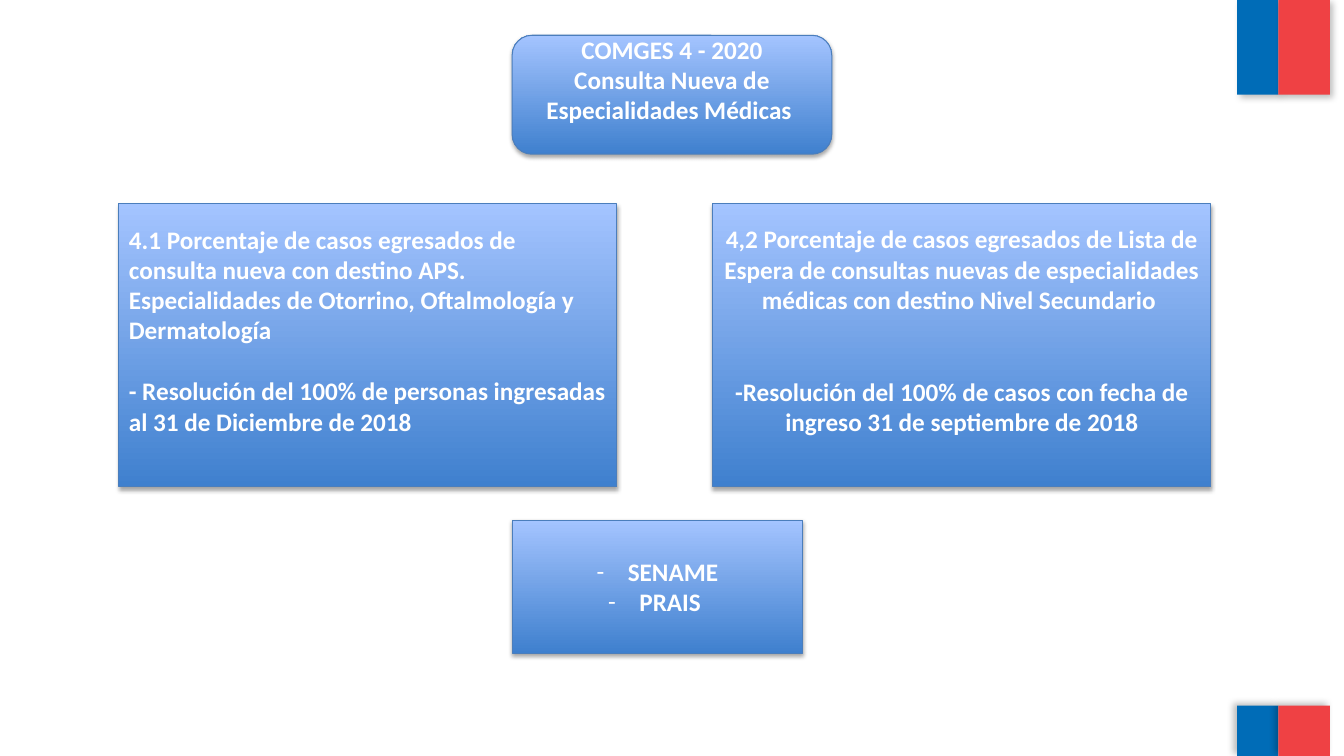
import pptx
import pptx.dml.color
import pptx.enum.shapes
import pptx.enum.text
import pptx.oxml
import pptx.oxml.ns
import pptx.util

Inches = pptx.util.Inches
Pt = pptx.util.Pt
SHAPE = pptx.enum.shapes.MSO_SHAPE
ALIGN = pptx.enum.text.PP_ALIGN

COLORS = {"blue": "006CB7", "red": "EF4144", "dark": "3F80CE", "light": "A4C4FF",
          "edge": "4B7EBC", "text": "FFFFFF", "shadow": "000000"}
FONT = "Calibri"
LINE = 22  # points, height of one text line

# Flag bands: left, width, colour; flag pieces: top, height, shadow angle
BANDS = [(12.27, 0.41, "blue"), (12.68, 0.51, "red")]
PIECES = [(0, 0.94, 45), (7, 0.5, 215)]

# Boxes: paragraphs are (text, empty lines above)
BOXES = [
    {"kind": SHAPE.ROUNDED_RECTANGLE, "at": (5.08, 0.35, 3.17, 1.18),
     "insets": (0, 0.3), "align": ALIGN.CENTER, "bullet": None,
     "lines": [("COMGES 4 - 2020", 0),
               ("Consulta Nueva de Especialidades Médicas ", 0)]},
    {"kind": SHAPE.RECTANGLE, "at": (1.18, 2.02, 4.94, 2.81),
     "insets": (0.05, 0.35), "align": ALIGN.LEFT, "bullet": None,
     "lines": [("4.1 Porcentaje de casos egresados de consulta nueva con destino APS.", 0),
               ("Especialidades de Otorrino, Oftalmología y Dermatología", 0),
               ("- Resolución del 100% de personas ingresadas al 31 de Diciembre de 2018", 1)]},
    {"kind": SHAPE.RECTANGLE, "at": (7.07, 2.02, 4.94, 2.81),
     "insets": (0.05, 0.35), "align": ALIGN.CENTER, "bullet": None,
     "lines": [("4,2 Porcentaje de casos egresados de Lista de Espera de consultas nuevas "
                "de especialidades médicas con destino Nivel Secundario ", 0),
               ("-Resolución del 100% de casos con fecha de ingreso 31 de septiembre de 2018", 2)]},
    {"kind": SHAPE.RECTANGLE, "at": (5.08, 5.16, 2.88, 1.32),
     "insets": (0.05, 0.05), "align": ALIGN.CENTER, "bullet": "-",
     "lines": [("SENAME", 0), ("PRAIS ", 0)]},
]


def color(name):
    return pptx.dml.color.RGBColor.from_string(COLORS[name])


def add_shadow(shape, opacity, blur, distance, angle):
    shape.shadow.inherit = False
    effects = shape._element.spPr.find(pptx.oxml.ns.qn("a:effectLst"))
    effects.append(pptx.oxml.parse_xml(
        f'<a:outerShdw {pptx.oxml.ns.nsdecls("a")} blurRad="{Pt(blur)}" '
        f'dist="{Pt(distance)}" dir="{angle * 60000}" algn="ctr" rotWithShape="0">'
        f'<a:srgbClr val="{COLORS["shadow"]}"><a:alpha val="{opacity * 1000}"/></a:srgbClr>'
        '</a:outerShdw>'))


def add_bullet(para, mark):
    properties = para._p.get_or_add_pPr()
    properties.set("marL", str(Inches(0.31)))
    properties.set("indent", str(Inches(-0.31)))
    for tag, key, value in (("buFont", "typeface", FONT), ("buChar", "char", mark)):
        properties.append(pptx.oxml.parse_xml(
            f'<a:{tag} {pptx.oxml.ns.nsdecls("a")} {key}="{value}"/>'))


def add_band(page, left, top, width, height, name, angle):
    band = page.shapes.add_shape(
        SHAPE.RECTANGLE, Inches(left), Inches(top), Inches(width), Inches(height))
    band.fill.solid()
    band.fill.fore_color.rgb = color(name)
    band.line.fill.background()
    add_shadow(band, 25, 5, 3, angle)


def add_box(page, content):
    box = page.shapes.add_shape(content["kind"], *map(Inches, content["at"]))
    box.fill.gradient()
    box.fill.gradient_angle = 90
    for stop, name in zip(box.fill.gradient_stops, ("dark", "light")):
        stop.color.rgb = color(name)
    box.line.color.rgb = color("edge")
    box.line.width = Pt(0.75)
    add_shadow(box, 35, 3.1, 1.8, 90)

    frame = box.text_frame
    frame.word_wrap = True
    frame.vertical_anchor = pptx.enum.text.MSO_ANCHOR.MIDDLE
    frame.margin_top, frame.margin_bottom = map(Inches, content["insets"])
    for index, (text, gap) in enumerate(content["lines"]):
        para = frame.add_paragraph() if index else frame.paragraphs[0]
        para.text = text
        para.alignment = content["align"]
        if gap:
            para.space_before = Pt(gap * LINE)
        if content["bullet"]:
            add_bullet(para, content["bullet"])
        para.font.name = FONT
        para.font.size = Pt(18)
        para.font.bold = True
        para.font.color.rgb = color("text")


def main():
    deck = pptx.Presentation()
    deck.slide_width, deck.slide_height = Inches(13.33), Inches(7.5)
    page = deck.slides.add_slide(deck.slide_layouts[6])

    # Flag at the top and bottom right
    for top, height, angle in PIECES:
        for left, width, name in BANDS:
            add_band(page, left, top, width, height, name, angle)

    # Title, goals and groups
    for content in BOXES:
        add_box(page, content)

    deck.save("out.pptx")


if __name__ == "__main__":
    main()
